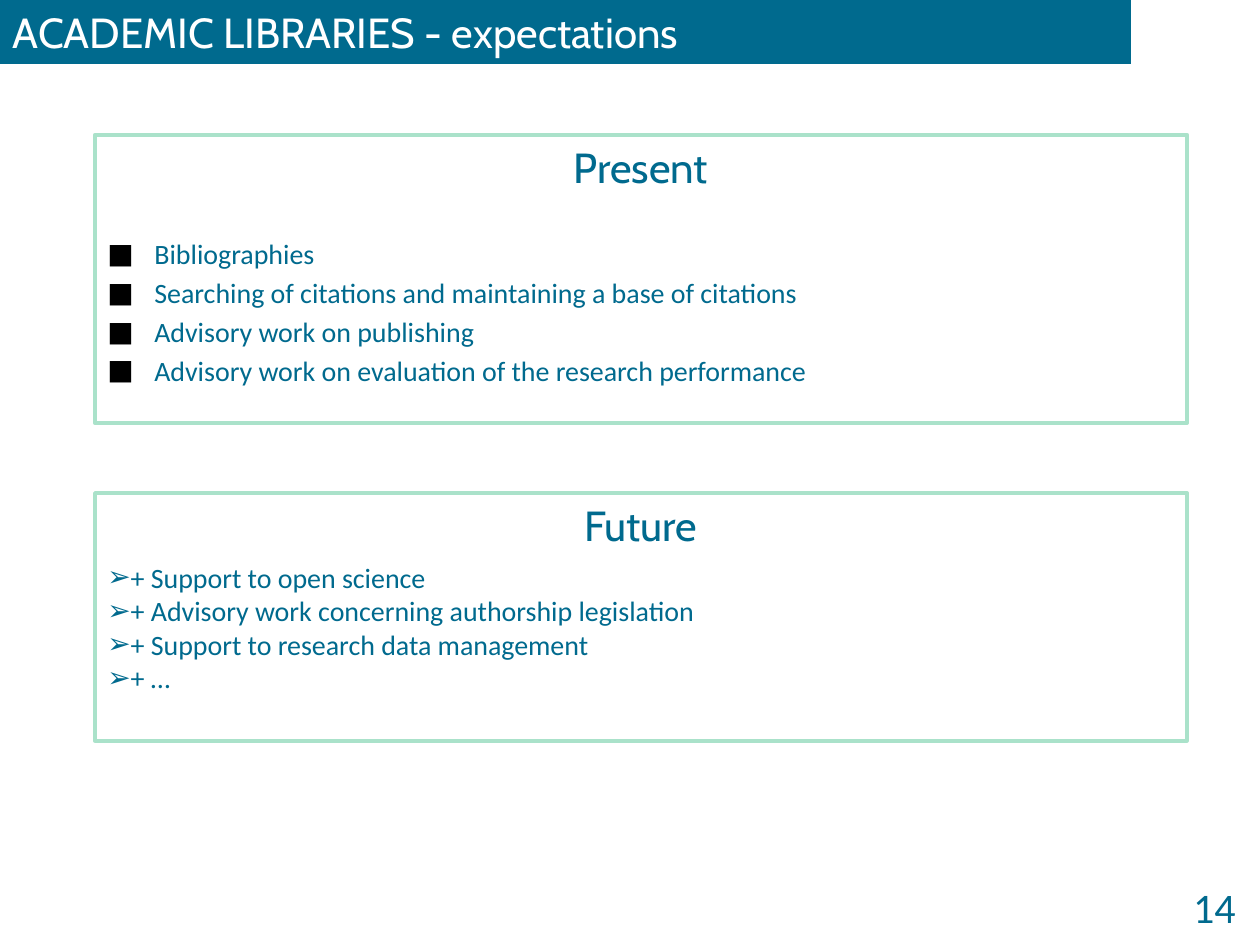
from dataclasses import dataclass

from lxml.etree import SubElement
from pptx import Presentation
from pptx.dml.color import RGBColor
from pptx.enum.shapes import MSO_SHAPE as Shape
from pptx.enum.text import MSO_ANCHOR as Anchor, MSO_AUTO_SIZE as AutoSize, PP_ALIGN as Align
from pptx.oxml.ns import qn
from pptx.util import Pt

EMU_PER_PX = 914400 / 126
COLORS = {"teal": "006A8E", "mint": "AAE2CA", "white": "FFFFFF", "black": "000000"}
HEADING_FONT, BODY_FONT = "Cabin", "Calibri"
HEADING_SIZE, BODY_SIZE = 24, 16
PANEL_LEFT, PANEL_WIDTH = 95, 1092


@dataclass(frozen=True)
class BulletStyle:
    char: str
    color: str
    indent: int  # px
    first_gap: float  # points between the heading and the first item
    gap: float  # points between items


@dataclass(frozen=True)
class Panel:
    heading: str
    top: int
    height: int
    border: float
    bullet: BulletStyle
    items: tuple[str, ...]


PANELS = (
    Panel("Present", 135, 288, 2.5, BulletStyle("■", "black", 47, 26, 3), (
        "Bibliographies",
        "Searching of citations and maintaining a base of citations",
        "Advisory work on publishing",
        "Advisory work on evaluation of the research performance",
    )),
    Panel("Future", 493, 248, 2, BulletStyle("➢", "teal", 0, 6, 0), (
        "+ Support to open science",
        "+ Advisory work concerning authorship legislation",
        "+ Support to research data management",
        "+ …",
    )),
)


def px(length: int) -> int:
    return round(length * EMU_PER_PX)


def rgb(name: str) -> RGBColor:
    return RGBColor.from_string(COLORS[name])


def place(shape, left: int, top: int, width: int, height: int) -> None:
    shape.left, shape.top, shape.width, shape.height = map(px, (left, top, width, height))


def fill(shape, color: str) -> None:
    shape.fill.solid()
    shape.fill.fore_color.rgb = rgb(color)


def set_frame(frame, anchor: Anchor) -> None:
    frame.word_wrap = True
    frame.auto_size = AutoSize.NONE
    frame.vertical_anchor = anchor


def write(paragraph, text: str, font_name: str, size: int, color: str, align=Align.LEFT) -> None:
    paragraph.alignment = align
    run = paragraph.add_run()
    run.text = text
    run.font.name = font_name
    run.font.size = Pt(size)
    run.font.color.rgb = rgb(color)


def add_bullet(paragraph, style: BulletStyle) -> None:
    props = paragraph._p.get_or_add_pPr()
    props.set("marL", str(px(style.indent)))
    props.set("indent", str(-px(style.indent)))
    SubElement(SubElement(props, qn("a:buClr")), qn("a:srgbClr"), val=COLORS[style.color])
    SubElement(props, qn("a:buFont"), typeface=BODY_FONT)
    SubElement(props, qn("a:buChar"), char=style.char)


def draw_title(slide, text: str) -> None:
    title = slide.shapes.title
    place(title, 0, 0, 1131, 64)
    fill(title, "teal")
    set_frame(title.text_frame, Anchor.MIDDLE)
    write(title.text_frame.paragraphs[0], text, HEADING_FONT, HEADING_SIZE, "white")


def draw_panel(slide, panel: Panel) -> None:
    box = slide.shapes.add_shape(
        Shape.RECTANGLE, px(PANEL_LEFT), px(panel.top), px(PANEL_WIDTH), px(panel.height))
    box.shadow.inherit = False
    fill(box, "white")
    box.line.color.rgb = rgb("mint")
    box.line.width = Pt(panel.border)
    frame = box.text_frame
    set_frame(frame, Anchor.TOP)
    write(frame.paragraphs[0], panel.heading, HEADING_FONT, HEADING_SIZE, "teal", Align.CENTER)
    for index, item in enumerate(panel.items):
        paragraph = frame.add_paragraph()
        add_bullet(paragraph, panel.bullet)
        paragraph.space_before = Pt(panel.bullet.gap if index else panel.bullet.first_gap)
        write(paragraph, item, BODY_FONT, BODY_SIZE, "teal")


def draw_page_number(slide, number: str) -> None:
    box = slide.shapes.add_textbox(px(1125), px(880), px(123), px(54))
    set_frame(box.text_frame, Anchor.MIDDLE)
    write(box.text_frame.paragraphs[0], number, BODY_FONT, HEADING_SIZE, "teal", Align.RIGHT)


def main() -> None:
    deck = Presentation()
    deck.slide_width, deck.slide_height = px(1260), px(945)
    slide = deck.slides.add_slide(deck.slide_layouts[5])
    draw_title(slide, "ACADEMIC LIBRARIES - expectations")
    for panel in PANELS:
        draw_panel(slide, panel)
    draw_page_number(slide, "14")
    deck.save("out.pptx")


if __name__ == "__main__":
    main()
